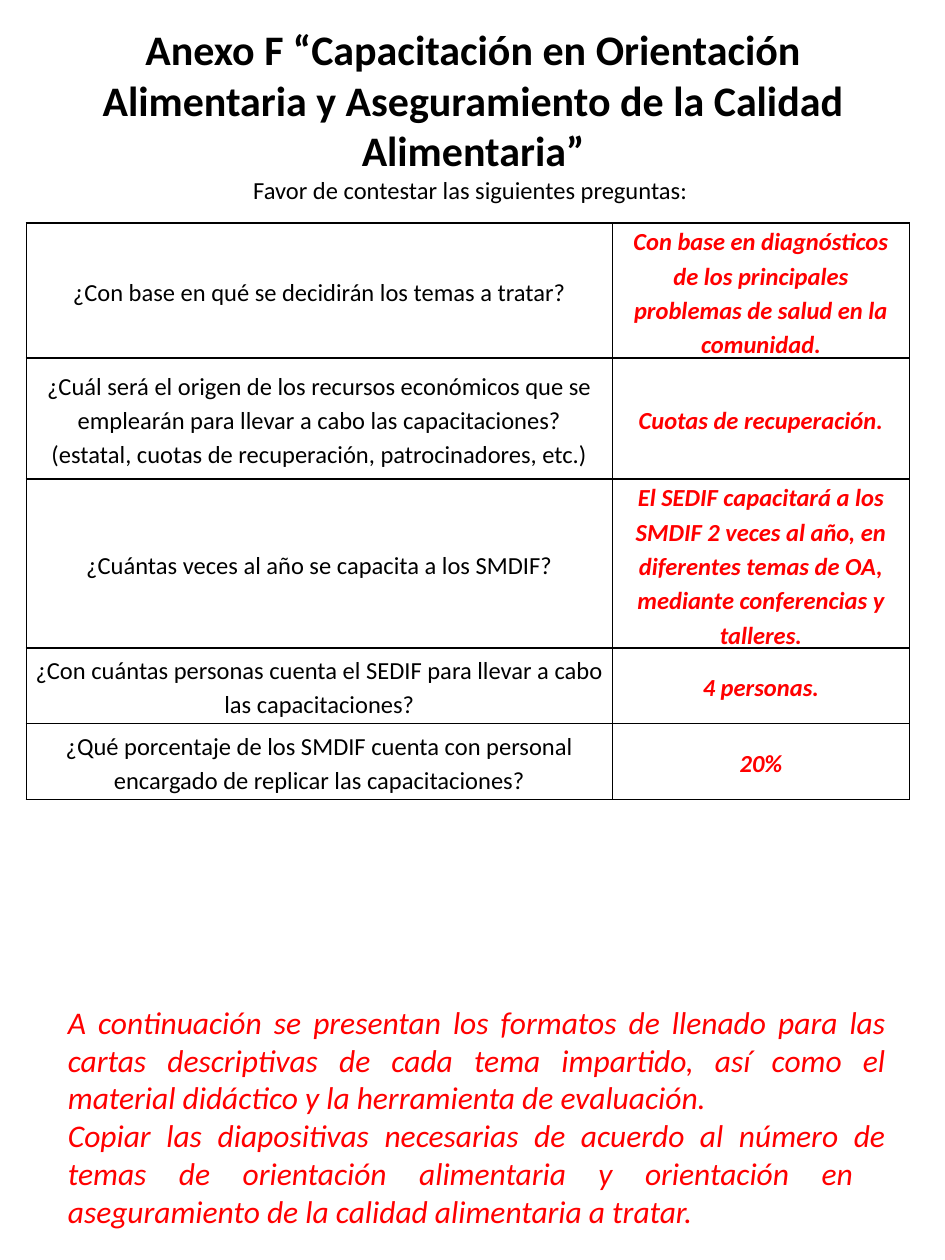
from typing import NamedTuple

from lxml.etree import SubElement
from pptx import Presentation
from pptx.dml.color import RGBColor
from pptx.enum.text import MSO_ANCHOR, PP_ALIGN
from pptx.oxml.ns import qn
from pptx.util import Inches, Pt


class Style(NamedTuple):
    size: int
    color: str = "000000"
    bold: bool = False
    italic: bool = False


class Row(NamedTuple):
    high: float
    ask: str
    reply: str


HEAD = Style(24, bold=True)
PLAIN = Style(14)
REPLY = Style(14, "FF0000", True, True)
NOTE = Style(18, "FF0000", italic=True)

TITLE = ("Anexo F “Capacitación en Orientación Alimentaria y "
         "Aseguramiento de la Calidad Alimentaria”")
LEAD = "Favor de contestar las siguientes preguntas: "
ROWS = [
    Row(0.8, "¿Con base en qué se decidirán los temas a tratar?",
        "Con base en diagnósticos de los principales problemas de salud en la comunidad."),
    Row(0.96, "¿Cuál será el origen de los recursos económicos que se emplearán para llevar "
        "a cabo las capacitaciones? (estatal, cuotas de recuperación, patrocinadores, etc.)",
        "Cuotas de recuperación."),
    Row(0.75, "¿Cuántas veces al año se capacita a los SMDIF?",
        "El SEDIF capacitará a los SMDIF 2 veces al año, en diferentes temas de OA, "
        "mediante conferencias y talleres."),
    Row(0.6, "¿Con cuántas personas cuenta el SEDIF para llevar a cabo las capacitaciones?",
        "4 personas."),
    Row(0.6, "¿Qué porcentaje de los SMDIF cuenta con personal encargado de replicar "
        "las capacitaciones?", "20%"),
]
NOTES = [
    "A continuación se presentan los formatos de llenado para las cartas descriptivas de cada "
    "tema impartido, así como el material didáctico y la herramienta de evaluación.",
    "Copiar las diapositivas necesarias de acuerdo al número de temas de orientación alimentaria "
    "y orientación en  aseguramiento de la calidad alimentaria a tratar.",
]


def paint(run, style: Style) -> None:
    """Apply a text style to a run."""
    font = run.font
    font.name = "Calibri"
    font.size = Pt(style.size)
    font.bold, font.italic = style.bold, style.italic
    font.color.rgb = RGBColor.from_string(style.color)


def add_text(slide, box: tuple, text: str, align: PP_ALIGN, styles: list[Style]):
    """Add a wrapped text box, cycling styles over the runs of each paragraph."""
    frame = slide.shapes.add_textbox(*map(Inches, box)).text_frame
    frame.word_wrap = True
    frame.text = text
    for para in frame.paragraphs:
        para.alignment = align
        for run, style in zip(para.runs, styles):
            paint(run, style)
    return frame


def add_edges(cell) -> None:
    """Draw a black one point line on every side of a cell."""
    props = cell._tc.get_or_add_tcPr()
    for spot, side in enumerate(("lnL", "lnR", "lnT", "lnB")):
        line = SubElement(props, qn(f"a:{side}"), w=str(Pt(1)))
        fill = SubElement(line, qn("a:solidFill"))
        SubElement(fill, qn("a:srgbClr"), val="000000")
        props.insert(spot, line)


def fill_cell(cell, text: str, style: Style) -> None:
    """Write one centred table cell."""
    cell.fill.background()
    cell.vertical_anchor = MSO_ANCHOR.MIDDLE
    cell.margin_left = cell.margin_right = Inches(0.07)
    cell.margin_top = cell.margin_bottom = 0
    cell.text_frame.text = text
    para = cell.text_frame.paragraphs[0]
    para.alignment = PP_ALIGN.CENTER
    para.line_spacing = 1.15
    paint(para.runs[0], style)
    add_edges(cell)


def add_grid(slide, rows: list[Row]) -> None:
    """Add the table of questions and replies."""
    high = sum(row.high for row in rows)
    box = map(Inches, (0.21, 1.77, 7.01, high))
    table = slide.shapes.add_table(len(rows), 2, *box).table
    table.first_row = table.horz_banding = False
    for col, width in zip(table.columns, (4.65, 2.36)):
        col.width = Inches(width)
    for spot, row in enumerate(rows):
        table.rows[spot].height = Inches(row.high)
        fill_cell(table.cell(spot, 0), row.ask, PLAIN)
        fill_cell(table.cell(spot, 1), row.reply, REPLY)


def main() -> None:
    """Build and save the slide."""
    deck = Presentation()
    deck.slide_width, deck.slide_height = Inches(7.5), Inches(10)
    slide = deck.slides.add_slide(deck.slide_layouts[6])
    title = add_text(slide, (0.29, 0.51, 6.93, 0.79), f"{TITLE}\v{LEAD}",
                     PP_ALIGN.CENTER, [HEAD, PLAIN])
    title.vertical_anchor = MSO_ANCHOR.MIDDLE
    add_grid(slide, ROWS)
    add_text(slide, (0.44, 7.91, 6.69, 1.92), "\n".join(NOTES), PP_ALIGN.JUSTIFY, [NOTE])
    deck.save("out.pptx")


if __name__ == "__main__":
    main()
